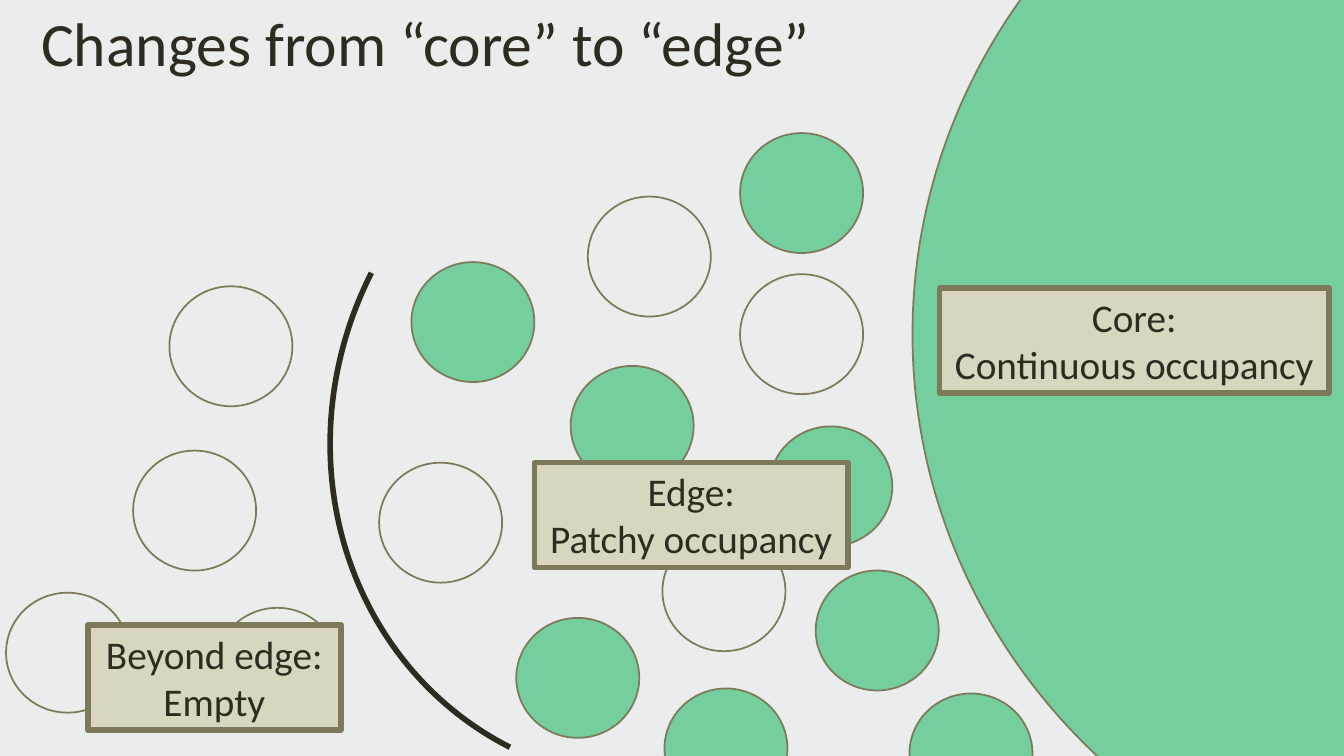
"""Build a slide showing how occupancy changes from the core of a range to its edge."""
from dataclasses import dataclass

from lxml import etree
from pptx import Presentation
from pptx import util as u
from pptx.dml.color import RGBColor
from pptx.enum import shapes, text
from pptx.oxml import ns

PX = 9144
PATCH_WIDTH, PATCH_HEIGHT = 122, 119
FONT = "Calibri"
COLOURS = {
    "background": "EAEDEB",
    "occupied": "00B050",
    "outline": "7D7A5C",
    "label": "D8D6BE",
    "ink": "2E2B21",
}


@dataclass(frozen=True)
class Box:
    left: int
    top: int
    width: int
    height: int

    def emu(self) -> tuple[int, ...]:
        return tuple(side * PX for side in (self.left, self.top, self.width, self.height))


@dataclass(frozen=True)
class Patch:
    left: int
    top: int
    occupied: bool = False

    def box(self) -> Box:
        return Box(self.left, self.top, PATCH_WIDTH, PATCH_HEIGHT)


@dataclass(frozen=True)
class Label:
    box: Box
    zone: str
    occupancy: str


CORE = Box(905, -252, 1208, 1167)
TITLE = Box(31, 0, 993, 131)
EDGE_LINE = Box(332, 65, 671, 715)
EDGE_ROTATION = 206.9

PATCHES = [
    Patch(734, 132, True),
    Patch(734, 272),
    Patch(763, 423, True),
    Patch(809, 566, True),
    Patch(902, 688, True),
    Patch(583, 195),
    Patch(566, 363, True),
    Patch(657, 527),
    Patch(659, 683, True),
    Patch(408, 260, True),
    Patch(512, 613, True),
    Patch(376, 459),
    Patch(168, 284),
    Patch(132, 447),
    Patch(214, 603),
    Patch(6, 588),
]

LABELS = [
    Label(Box(530, 459, 311, 104), "Edge:", "Patchy occupancy"),
    Label(Box(932, 286, 386, 104), "Core:", "Continuous occupancy"),
    Label(Box(87, 620, 251, 104), "Beyond edge:", "Empty"),
]


def colour(name: str) -> RGBColor:
    return RGBColor.from_string(COLOURS[name])


def add_outlined(page, kind, box: Box, line: str, points: float):
    shape = page.shapes.add_shape(kind, *box.emu())
    shape.shadow.inherit = False
    shape.fill.background()
    shape.line.color.rgb = colour(line)
    shape.line.width = u.Pt(points)
    return shape


def add_circle(page, box: Box, occupied: bool) -> None:
    circle = add_outlined(page, shapes.MSO_SHAPE.OVAL, box, "outline", 1.25)
    if occupied:
        circle.fill.solid()
        circle.fill.fore_color.rgb = colour("occupied")
        tint = circle._element.spPr.find(ns.qn("a:solidFill"))[0]
        etree.SubElement(tint, ns.qn("a:alpha"), val="50000")


def write_lines(shape, lines: list[str], size: int, align) -> None:
    frame = shape.text_frame
    frame.word_wrap = True
    frame.auto_size = text.MSO_AUTO_SIZE.SHAPE_TO_FIT_TEXT
    frame.vertical_anchor = text.MSO_ANCHOR.TOP
    frame.text = "\n".join(lines)
    for para in frame.paragraphs:
        para.alignment = align
        para.font.name = FONT
        para.font.size = u.Pt(size)
        para.font.color.rgb = colour("ink")


def add_label(page, label: Label) -> None:
    shape = add_outlined(page, shapes.MSO_SHAPE.RECTANGLE, label.box, "outline", 4)
    shape.fill.solid()
    shape.fill.fore_color.rgb = colour("label")
    write_lines(shape, [label.zone, label.occupancy], 28, text.PP_ALIGN.CENTER)


def main() -> None:
    deck = Presentation()
    deck.slide_width, deck.slide_height = 1333 * PX, 750 * PX
    page = deck.slides.add_slide(deck.slide_layouts[6])
    page.background.fill.solid()
    page.background.fill.fore_color.rgb = colour("background")

    add_circle(page, CORE, True)
    title = page.shapes.add_textbox(*TITLE.emu())
    write_lines(title, ["Changes from “core” to “edge”"], 44, text.PP_ALIGN.LEFT)
    for patch in PATCHES:
        add_circle(page, patch.box(), patch.occupied)
    edge_line = add_outlined(page, shapes.MSO_SHAPE.ARC, EDGE_LINE, "ink", 4)
    edge_line.rotation = EDGE_ROTATION
    for label in LABELS:
        add_label(page, label)

    deck.save("out.pptx")


if __name__ == "__main__":
    main()
